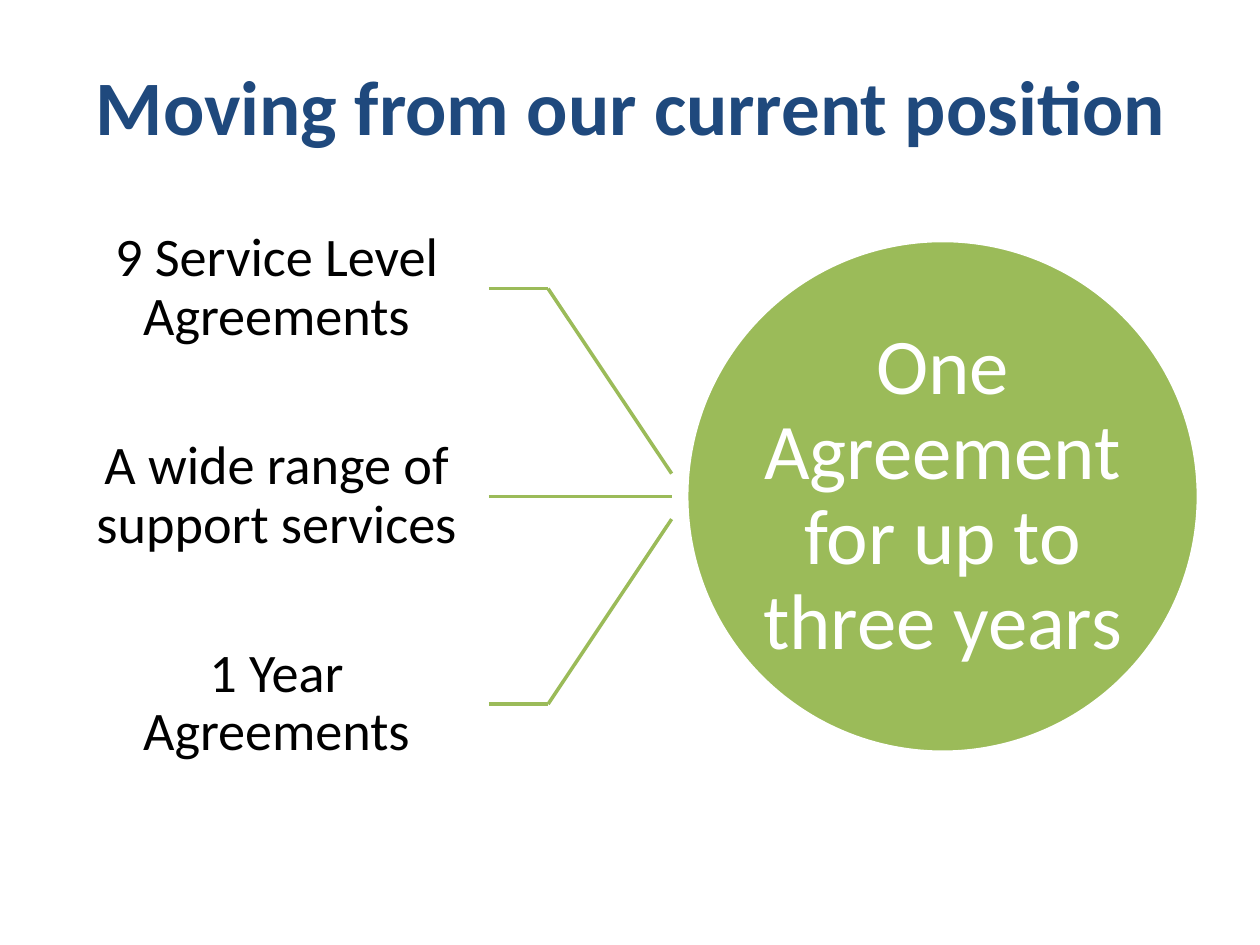
from pptx import Presentation
from pptx.dml.color import RGBColor
from pptx.enum.shapes import MSO_CONNECTOR, MSO_SHAPE
from pptx.enum.text import MSO_ANCHOR, PP_ALIGN
from pptx.oxml.ns import qn
from pptx.util import Pt
from lxml.etree import SubElement

# Content
TITLE = "Moving from our current position"
NOW = [
    "9 Service Level Agreements",
    "A wide range of support services",
    "1 Year Agreements",
]
GOAL = "One Agreement for up to three years"

# Colours and font
NAVY = RGBColor(0x1F, 0x49, 0x7D)
GREEN = RGBColor(0x9B, 0xBB, 0x59)
WHITE = RGBColor(0xFF, 0xFF, 0xFF)
BLACK = RGBColor(0, 0, 0)
FONT = "Calibri"

# Layout in points
LEFT, TOP, WIDE, HIGH = 36.7, 105.6, 242.6, 118.7
BEND, TIP = 313.2, 383.8   # x of the bend and of the line's end
GAP = 13                   # y step between line ends at the circle
DISC = 292.4
DISC_X = 392.4
MID = TOP + HIGH * len(NOW) / 2


def write(shape, text, size, color, inset=0, bold=False, space=None):
    frame = shape.text_frame
    frame.word_wrap = True
    frame.vertical_anchor = MSO_ANCHOR.MIDDLE
    frame.margin_left = frame.margin_right = Pt(inset)
    frame.margin_top = frame.margin_bottom = Pt(inset)
    para = frame.paragraphs[0]
    para.alignment = PP_ALIGN.CENTER
    para.line_spacing = space
    run = para.add_run()
    run.text = text
    font = run.font
    font.name, font.size, font.bold = FONT, Pt(size), bold
    font.color.rgb = color


def draw_line(x1, y1, x2, y2):
    line = slide.shapes.add_connector(
        MSO_CONNECTOR.STRAIGHT, Pt(x1), Pt(y1), Pt(x2), Pt(y2))
    line.line.color.rgb = GREEN
    line.line.width = Pt(2)
    SubElement(line.element.spPr, qn("a:effectLst"))
    return line


deck = Presentation()
deck.slide_width, deck.slide_height = Pt(720), Pt(540)
slide = deck.slides.add_slide(deck.slide_layouts[5])

# Title
title = slide.shapes.title
title.left, title.top = Pt(LEFT), Pt(15.1)
title.width, title.height = Pt(648), Pt(90)
write(title, TITLE, 44, NAVY, inset=3.6, bold=True)

# Goal circle
disc = slide.shapes.add_shape(
    MSO_SHAPE.OVAL, Pt(DISC_X), Pt(MID - DISC / 2), Pt(DISC), Pt(DISC))
disc.shadow.inherit = False
disc.fill.solid()
disc.fill.fore_color.rgb = GREEN
disc.line.color.rgb = WHITE
disc.line.width = Pt(2)
write(disc, GOAL, 45, WHITE, space=0.9)

# Current position, each item led to the circle
for i, text in enumerate(NOW):
    top = TOP + i * HIGH
    y = top + HIGH / 2
    end = MID + (i - (len(NOW) - 1) / 2) * GAP
    box = slide.shapes.add_textbox(Pt(LEFT), Pt(top), Pt(WIDE), Pt(HIGH))
    write(box, text, 31, BLACK, inset=17.3, space=0.9)
    stub = draw_line(LEFT + WIDE, y, BEND, y)
    stub.begin_connect(box, 3)
    draw_line(BEND, y, TIP, end)

deck.save("out.pptx")
